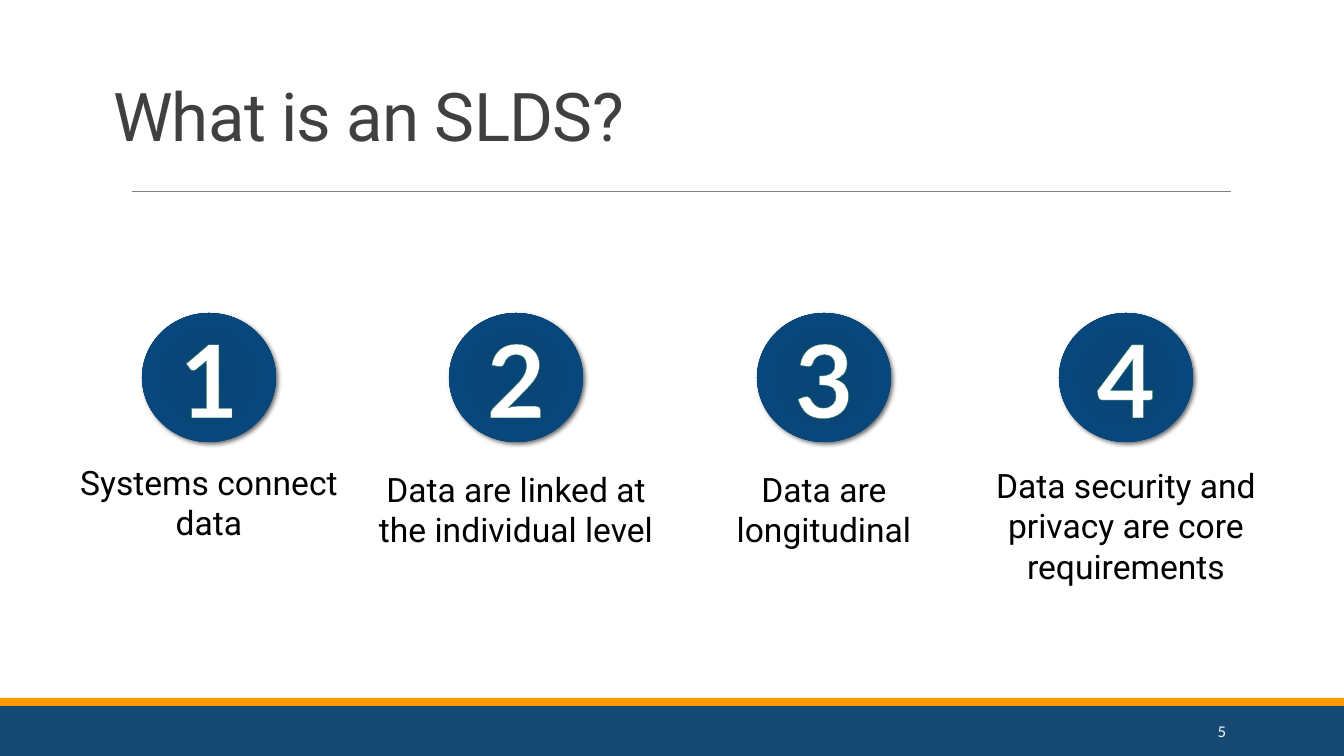
from pptx import Presentation
from pptx.dml.color import RGBColor
from pptx.enum.shapes import MSO_CONNECTOR, MSO_SHAPE
from pptx.enum.text import MSO_ANCHOR as ANCHOR, PP_ALIGN as ALIGN
from pptx.oxml import parse_xml
from pptx.oxml.ns import nsdecls
from pptx.util import Pt

EMU_PER_PX = 914400 / 100.8
WIDTH, HEIGHT = 1344, 756
CIRCLE_W, CIRCLE_H, LABEL_W = 134, 129, 304
NS = nsdecls("a")
STOPS = [(0, "064578"), (34, "094677"), (70, "07477B"), (100, "104978")]
# number, centre x, label top, label
POINTS = [
    ("1", 209, 457, "Systems connect data"),
    ("2", 516, 464, "Data are linked at the individual level"),
    ("3", 824, 464, "Data are longitudinal"),
    ("4", 1126, 460, "Data security and privacy are core requirements"),
]
TITLE = {"name": "Roboto", "size": Pt(48), "bold": False}
LABEL = {"name": "Roboto", "size": Pt(24)}
NUMBER = {"name": "Lato", "size": Pt(72), "bold": True}
PAGE = {"name": "Lato", "size": Pt(10.5)}


def px(*lengths):
    return [round(n * EMU_PER_PX) for n in lengths]


def rgb(code):
    return RGBColor.from_string(code)


def write(shape, text, style, color, align, anchor):
    tf = shape.text_frame
    tf.word_wrap, tf.vertical_anchor = True, anchor
    p = tf.paragraphs[0]
    p.alignment = align
    r = p.add_run()
    r.text = text
    for name, value in style.items():
        setattr(r.font, name, value)
    r.font.color.rgb = rgb(color)
    return p, r


def add_text(s, box, *text_args):
    return write(s.shapes.add_textbox(*px(*box)), *text_args)


def add_title(s, box, text):
    title = s.shapes.title
    title.left, title.top, title.width, title.height = px(*box)
    p, r = write(title, text, TITLE, "404040", ALIGN.LEFT, ANCHOR.BOTTOM)
    p.line_spacing = 0.85
    r.font._element.set("spc", "-50")


def add_rule(s, x1, x2, y):
    line = s.shapes.add_connector(MSO_CONNECTOR.STRAIGHT, *px(x1, y, x2, y))
    line.line.color.rgb, line.line.width = rgb("808080"), Pt(0.5)
    line._element.spPr.append(parse_xml(f"<a:effectLst {NS}/>"))


def add_footer(s, top, page):
    for y, h, color in ((top + 8, HEIGHT - top - 8, "154973"), (top, 8, "FF9900")):
        bar = s.shapes.add_shape(MSO_SHAPE.RECTANGLE, *px(0, y, WIDTH, h))
        bar.shadow.inherit = False
        bar.fill.solid()
        bar.fill.fore_color.rgb = rgb(color)
        bar.line.fill.background()
    add_text(s, (1092, top + 14, 144, 40), page, PAGE, "FFFFFF", ALIGN.RIGHT, ANCHOR.MIDDLE)


def style_circle(circle):
    """Give the circle its radial gradient and soft shadow."""
    spPr = circle._element.spPr
    stops = "".join(f'<a:gs pos="{pos * 1000}"><a:srgbClr val="{color}"/></a:gs>'
                    for pos, color in STOPS)
    spPr.insert(2, parse_xml(
        f'<a:gradFill {NS}><a:gsLst>{stops}</a:gsLst><a:path path="circle">'
        '<a:fillToRect l="100000" t="100000" r="100000" b="100000"/></a:path></a:gradFill>'))
    circle.line.fill.background()
    spPr.append(parse_xml(
        f'<a:effectLst {NS}><a:outerShdw blurRad="{Pt(3.5)}" dist="{Pt(2)}" dir="2700000">'
        '<a:srgbClr val="000000"><a:alpha val="60000"/></a:srgbClr>'
        '</a:outerShdw></a:effectLst>'))


def add_point(s, center, top, number, label_top, label):
    circle = s.shapes.add_shape(
        MSO_SHAPE.OVAL, *px(center - CIRCLE_W / 2, top, CIRCLE_W, CIRCLE_H))
    style_circle(circle)
    p, r = write(circle, number, NUMBER, "FFFFFF", ALIGN.CENTER, ANCHOR.MIDDLE)
    r.font._element.insert(0, parse_xml(
        f'<a:ln {NS} w="{Pt(0.8)}"><a:solidFill><a:srgbClr val="3E8853"/></a:solidFill></a:ln>'))
    p, r = add_text(s, (center - LABEL_W / 2, label_top, LABEL_W, 92), label,
                    LABEL, "000000", ALIGN.CENTER, ANCHOR.TOP)
    p.space_after = Pt(7)


def main():
    prs = Presentation()
    prs.slide_width, prs.slide_height = px(WIDTH, HEIGHT)
    s = prs.slides.add_slide(prs.slide_layouts[5])
    add_footer(s, 698, "5")
    add_rule(s, 132, 1231, 191)
    add_title(s, (103, 0, 1109, 160), "What is an SLDS?")
    for number, center, label_top, label in POINTS:
        add_point(s, center, 313, number, label_top, label)
    prs.save("out.pptx")


if __name__ == "__main__":
    main()
